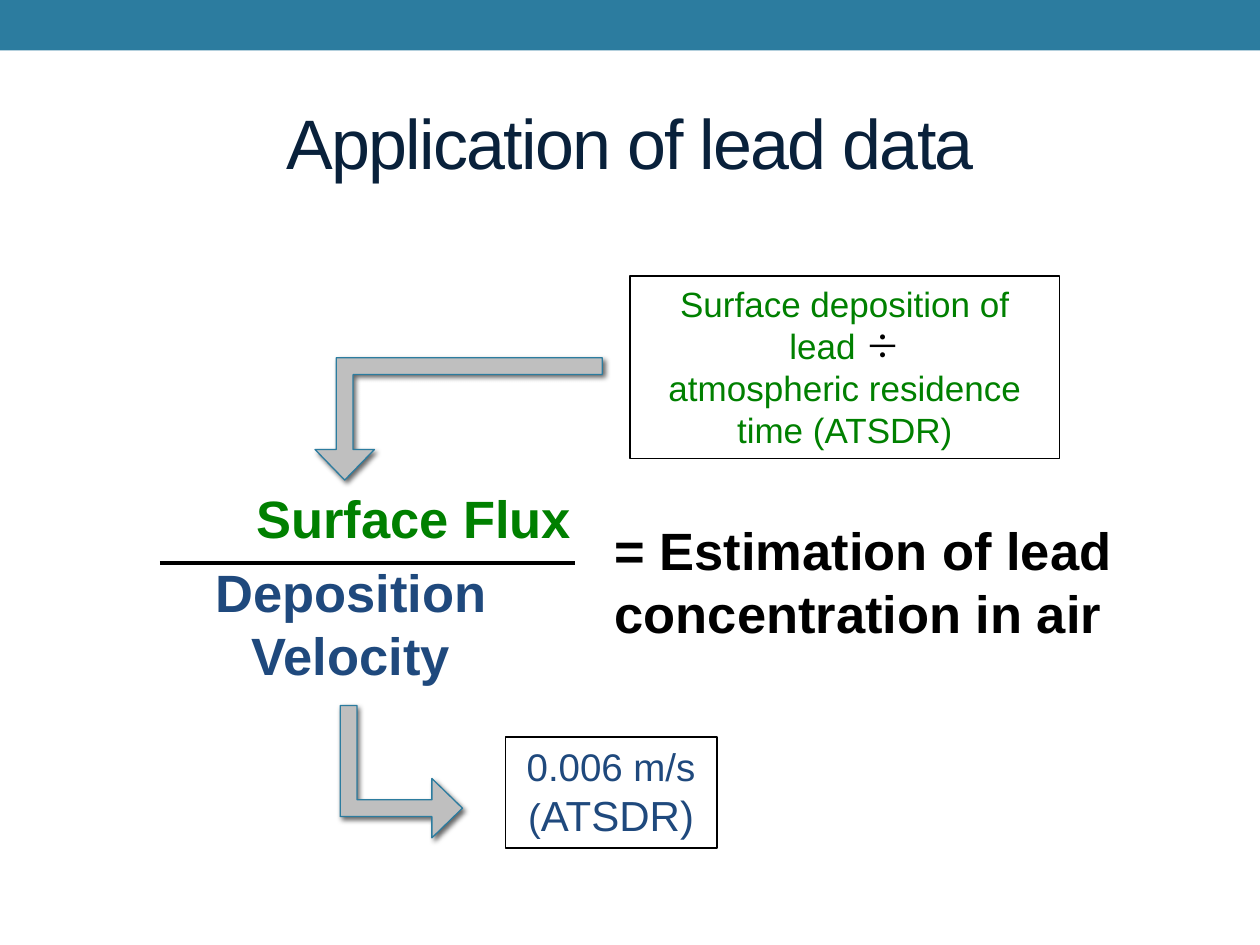
"""Build the slide on the use of lead data."""
from typing import NamedTuple

from pptx import Presentation
from pptx.dml.color import RGBColor
from pptx.enum.shapes import MSO_CONNECTOR as Link, MSO_SHAPE as Kind
from pptx.enum.text import MSO_ANCHOR as Anchor, MSO_AUTO_SIZE as Fit, PP_ALIGN as Align
from pptx.oxml import parse_xml
from pptx.oxml.ns import nsdecls
from pptx.util import Inches, Pt

TEAL, NAVY, BLUE = "2C7C9F", "09213B", "1F497D"
GREEN, GREY, BLACK = "008000", "BFBFBF", "000000"


class Run(NamedTuple):
    text: str
    size: float
    color: str
    bold: bool = False
    font: str = "Arial"


class Para(NamedTuple):
    runs: list[Run]
    align: Align = Align.CENTER
    before: float = 0
    indent: float = 0


class Box(NamedTuple):
    area: tuple[float, float, float, float]
    paras: list[Para]
    framed: bool = False


class Arrow(NamedTuple):
    area: tuple[float, float, float, float]
    turn: float


BOXES = [
    Box((0.77, 3.81, 4.03, 1.21), [
        Para([Run("Surface Flux", 30, GREEN, True)], before=6, indent=1),
        Para([Run("Deposition Velocity", 30, BLUE, True)], before=6),
    ]),
    Box((4.01, 5.85, 1.68, 0.88), [
        Para([Run("0.006 m/s (", 22, BLUE), Run("ATSDR)", 24, BLUE)]),
    ], framed=True),
    Box((5, 2.19, 3.41, 1.45), [
        Para([Run("Surface deposition of lead ", 20, GREEN),
              Run("÷", 20, BLACK, font="Noto Sans CJK JP")]),
        Para([Run("atmospheric residence time (ATSDR)", 20, GREEN)]),
    ], framed=True),
    Box((4.78, 4.06, 4.34, 1.11), [
        Para([Run("= Estimation of lead concentration in air", 30, BLACK, True)],
             Align.LEFT),
    ]),
]
ARROWS = [Arrow((2.5, 2.84, 2.28, 0.97), 180), Arrow((2.66, 5.64, 1.05, 0.97), 90)]


def paint(color, code: str) -> None:
    """Set a colour from a hex string."""
    color.rgb = RGBColor.from_string(code)


def stroke(line, code: str, width: float) -> None:
    """Give a line its colour and width."""
    paint(line.color, code)
    line.width = Pt(width)


def fill(shape, code: str) -> None:
    """Fill a shape with one colour."""
    shape.fill.solid()
    paint(shape.fill.fore_color, code)


def write(frame, paras: list[Para]) -> None:
    """Write paragraphs run by run."""
    frame.word_wrap = True
    for i, para in enumerate(paras):
        p = frame.add_paragraph() if i else frame.paragraphs[0]
        p.alignment = para.align
        p.space_before = Pt(para.before)
        if para.indent:
            p._p.get_or_add_pPr().set("marL", str(Inches(para.indent)))
        for run in para.runs:
            r = p.add_run()
            r.text = run.text
            r.font.name, r.font.size, r.font.bold = run.font, Pt(run.size), run.bold
            paint(r.font.color, run.color)


def draw_title(slide, text: str) -> None:
    """Place and format the title."""
    title = slide.shapes.title
    title.left, title.top, title.width, title.height = map(Inches, (0.5, 0.58, 9, 1.08))
    frame = title.text_frame
    frame.vertical_anchor = Anchor.MIDDLE
    write(frame, [Para([Run(text, 40, NAVY)])])
    frame.paragraphs[0].runs[0].font._element.set("spc", "-100")


def draw_band(slide) -> None:
    """Draw the band along the top."""
    band = slide.shapes.add_shape(Kind.RECTANGLE, *map(Inches, (0, 0, 10, 0.4)))
    band.shadow.inherit = False
    fill(band, TEAL)
    band.line.fill.background()


def draw_box(slide, box: Box) -> None:
    """Draw a text box, framed or plain."""
    area = map(Inches, box.area)
    if box.framed:
        shape = slide.shapes.add_shape(Kind.RECTANGLE, *area)
        shape.shadow.inherit = False
        shape.fill.background()
        stroke(shape.line, BLACK, 0.75)
    else:
        shape = slide.shapes.add_textbox(*area)
    frame = shape.text_frame
    frame.vertical_anchor = Anchor.TOP
    frame.auto_size = Fit.SHAPE_TO_FIT_TEXT
    write(frame, box.paras)


def draw_arrow(slide, arrow: Arrow) -> None:
    """Draw a bent arrow with a soft shadow."""
    shape = slide.shapes.add_shape(Kind.BENT_UP_ARROW, *map(Inches, arrow.area))
    shape.rotation = arrow.turn
    for i, value in enumerate((0.137, 0.243, 0.25)):
        shape.adjustments[i] = value
    fill(shape, GREY)
    stroke(shape.line, TEAL, 0.75)
    shape._element.spPr.append(parse_xml(
        f'<a:effectLst {nsdecls("a")}><a:outerShdw blurRad="{Pt(3)}" dist="{Pt(2)}" '
        f'dir="{45 * 60000}" rotWithShape="0"><a:srgbClr val="{BLACK}">'
        '<a:alpha val="60000"/></a:srgbClr></a:outerShdw></a:effectLst>'))


def draw_rule(slide) -> None:
    """Draw the line of the fraction."""
    rule = slide.shapes.add_connector(Link.STRAIGHT, *map(Inches, (1.27, 4.47, 4.56, 4.47)))
    stroke(rule.line, BLACK, 2.08)
    rule._element.spPr.append(parse_xml(f'<a:effectLst {nsdecls("a")}/>'))


def main() -> None:
    """Build and save the slide."""
    deck = Presentation()
    deck.slide_width, deck.slide_height = Inches(10), Inches(7.5)
    slide = deck.slides.add_slide(deck.slide_layouts[5])
    draw_band(slide)
    draw_title(slide, "Application of lead data")
    for box in BOXES:
        draw_box(slide, box)
    for arrow in ARROWS:
        draw_arrow(slide, arrow)
    draw_rule(slide)
    deck.save("out.pptx")


if __name__ == "__main__":
    main()
